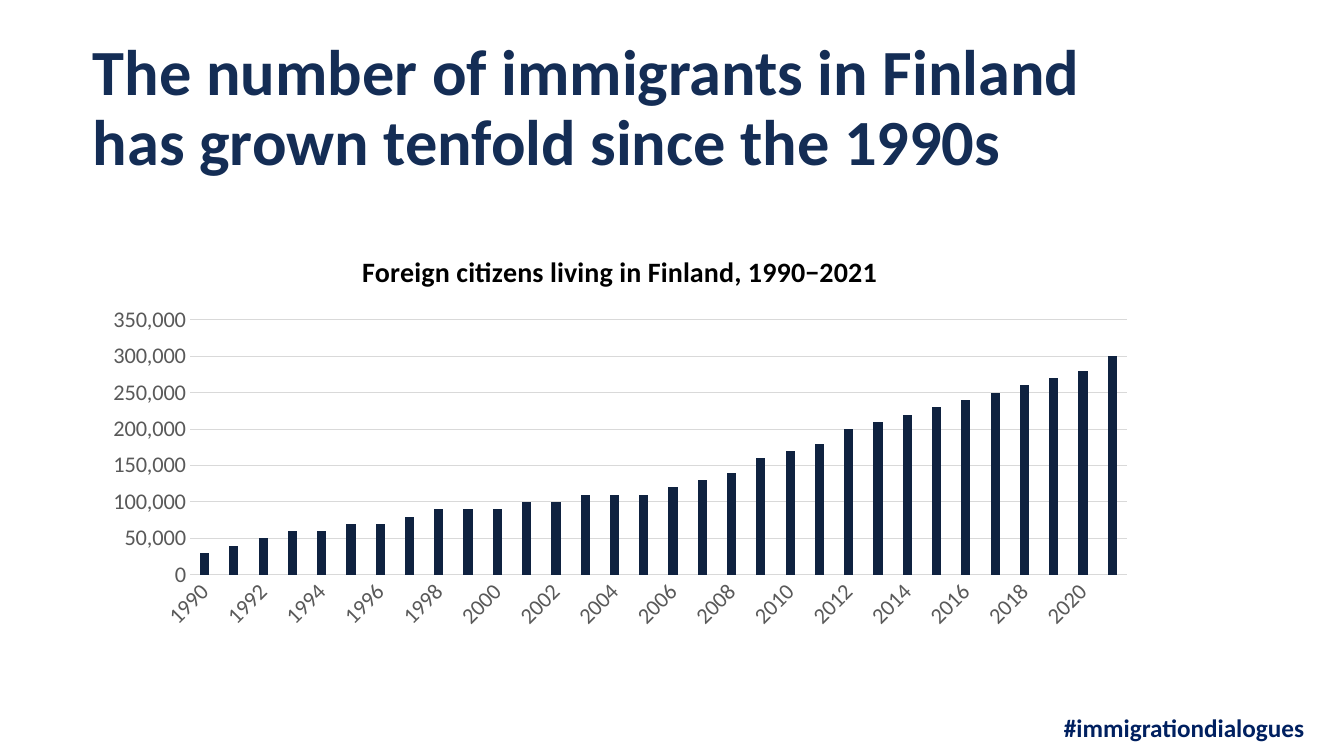
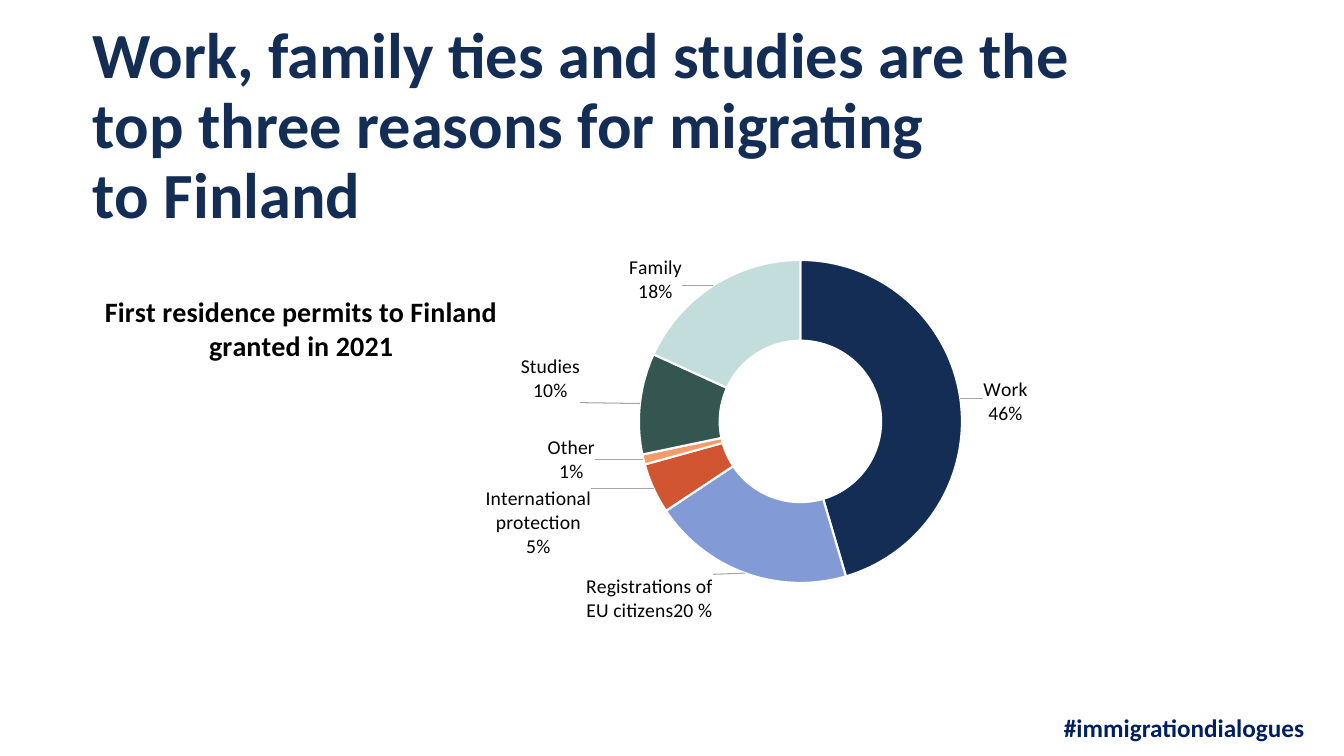
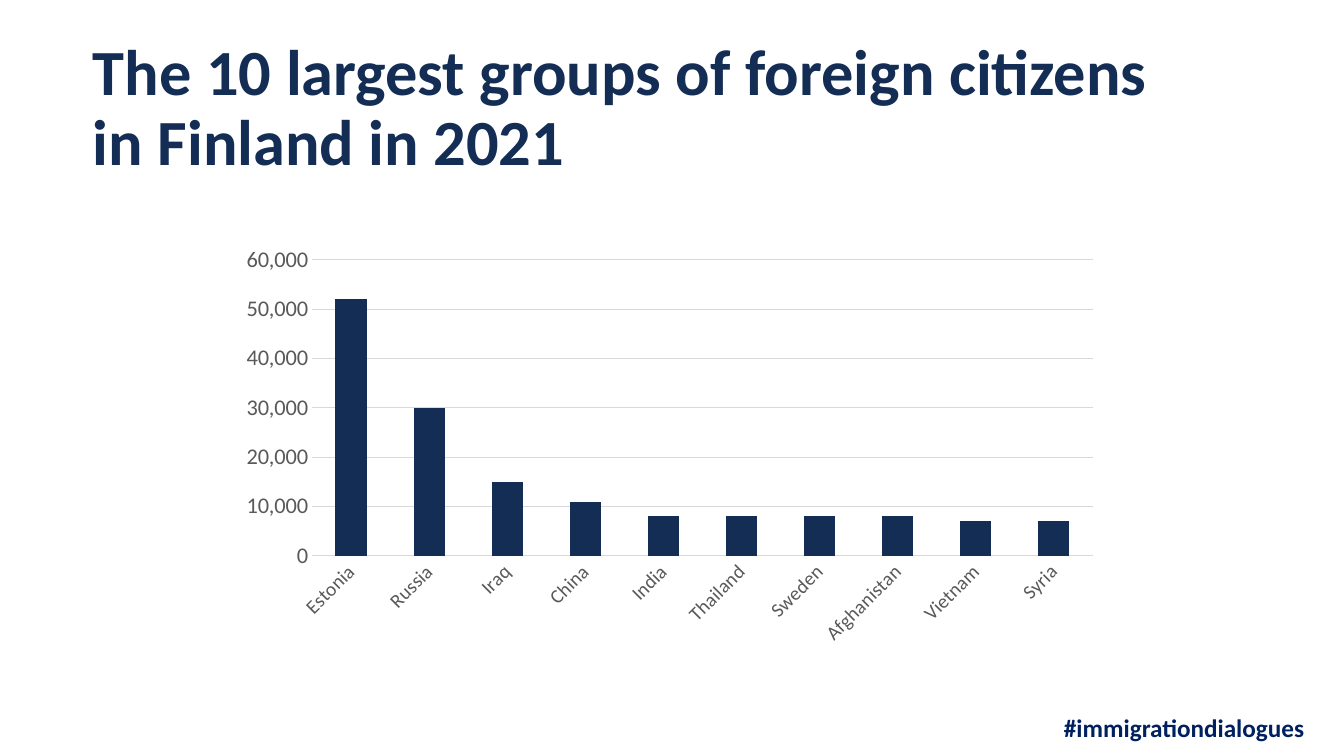
from math import cos, pi, sin

from lxml.etree import SubElement
from pptx import Presentation
from pptx.chart.data import CategoryChartData
from pptx.dml.color import RGBColor
from pptx.enum.chart import XL_CHART_TYPE, XL_TICK_MARK
from pptx.enum.text import MSO_ANCHOR, MSO_AUTO_SIZE, PP_ALIGN
from pptx.oxml import parse_xml
from pptx.oxml.ns import nsdecls, qn
from pptx.util import Pt

# Shared measures and colours
PX = 12192000 / 1344
NAVY, DARK_NAVY, FOOTER_BLUE = "142D55", "0F2240", "002060"
BLACK, AXIS_GREY, GRID_GREY = "000000", "595959", "D9D9D9"
LEFT, WIDTH = 93, 1055


def style_font(font, size, colour, bold=False):
    font.name = "Calibri"
    font.size = Pt(size)
    font.bold = bold
    font.color.rgb = RGBColor.from_string(colour)


def set_layout(parent, position, **settings):
    """Give a chart part a manual layout; fractions are of the chart frame."""
    for old_layout in parent.findall(qn("c:layout")):
        parent.remove(old_layout)
    layout = parse_xml(f"<c:layout {nsdecls('c')}/>")
    manual = SubElement(layout, qn("c:manualLayout"))
    for name, value in settings.items():
        text = value if isinstance(value, str) else f"{value:.4f}"
        SubElement(manual, qn(f"c:{name}")).set("val", text)
    parent.insert(position, layout)


presentation = Presentation()
presentation.slide_width = round(1344 * PX)
presentation.slide_height = round(756 * PX)
title_only = presentation.slide_layouts[5]
for placeholder in list(title_only.placeholders):
    if placeholder.placeholder_format.idx != 0:
        title_only.shapes.element.remove(placeholder.element)

# Slides with their titles: lines and box height
titles = [
    (["The number of immigrants in Finland has grown tenfold since the 1990s"], 137),
    (["Work, family ties and studies are the top three reasons for migrating",
      "to Finland"], 190),
    (["The 10 largest groups of foreign citizens in Finland in 2021"], 137),
]
slides = []
for lines, height in titles:
    slide = presentation.slides.add_slide(title_only)
    slides.append(slide)
    title = slide.shapes.title
    title.left, title.top = round(LEFT * PX), round(42 * PX)
    title.width, title.height = round(WIDTH * PX), round(height * PX)
    frame = title.text_frame
    frame.margin_left = frame.margin_right = frame.margin_top = frame.margin_bottom = 0
    frame.word_wrap = True
    frame.auto_size = MSO_AUTO_SIZE.NONE
    frame.vertical_anchor = MSO_ANCHOR.BOTTOM
    paragraph = frame.paragraphs[0]
    paragraph.alignment = PP_ALIGN.LEFT
    paragraph.line_spacing = 0.9
    for number, line in enumerate(lines):
        if number:
            paragraph.add_line_break()
        run = paragraph.add_run()
        run.text = line
        style_font(run.font, 46, NAVY, True)

# Footer, moved to the layout so that every slide shows it
footer = slides[0].shapes.add_textbox(
    round(1064 * PX), round(709 * PX), round(265 * PX), round(23 * PX))
frame = footer.text_frame
frame.margin_left = frame.margin_right = frame.margin_top = frame.margin_bottom = 0
frame.word_wrap = True
paragraph = frame.paragraphs[0]
paragraph.line_spacing = 1.1
run = paragraph.add_run()
run.text = "#immigrationdialogues"
style_font(run.font, 18, FOOTER_BLUE, True)
title_only.shapes.element.append(footer.element)

# Chart data
citizens = [
    30000, 40000, 50000, 60000, 60000, 70000, 70000, 80000,
    90000, 90000, 90000, 100000, 100000, 110000, 110000, 110000,
    120000, 130000, 140000, 160000, 170000, 180000, 200000, 210000,
    220000, 230000, 240000, 250000, 260000, 270000, 280000, 300000,
]
groups = {
    "Estonia": 52000, "Russia": 30000, "Iraq": 15000, "China": 11000,
    "India": 8000, "Thailand": 8000, "Sweden": 8000, "Afghanistan": 8000,
    "Vietnam": 7000, "Syria": 7000,
}
# Category, value, colour, label lines, label centre in px
permits = [
    ("Work", 45, NAVY, ["Work", "46%"], (1005, 401)),
    ("Registrations of EU citizens", 20, "829BD7",
     ["Registrations of", "EU citizens20 %"], (649, 598)),
    ("International protection", 5, "D25532",
     ["International", "protection", "5%"], (538, 522)),
    ("Other", 1, "F59B69", ["Other", "1%"], (571, 459)),
    ("Studies", 10, "355550", ["Studies", "10%"], (550, 378)),
    ("Family", 18, "C3DCDC", ["Family", "18%"], (655, 279)),
]

# Charts: slide, type, categories, values, frame top and height, plot box,
# title lines, title corner
years = [str(1990 + number) for number in range(len(citizens))]
chart_specs = [
    (slides[0], XL_CHART_TYPE.COLUMN_CLUSTERED, years, citizens, 233, 405,
     (190, 320, 937, 255), ["Foreign citizens living in Finland, 1990−2021"], (357, 247)),
    (slides[1], XL_CHART_TYPE.DOUGHNUT, [permit[0] for permit in permits],
     [permit[1] for permit in permits], 233, 405, (571, 260, 459, 323),
     ["First residence permits to Finland", "granted in 2021"], (102, 290)),
    (slides[2], XL_CHART_TYPE.COLUMN_CLUSTERED, list(groups), list(groups.values()),
     210, 449, (312, 260, 781, 296), [], None),
]
charts = []
for slide, kind, categories, values, top, height, plot_box, lines, corner in chart_specs:
    data = CategoryChartData()
    data.categories = categories
    data.add_series("Series 1", values)
    chart = slide.shapes.add_chart(
        kind, round(LEFT * PX), round(top * PX), round(WIDTH * PX), round(height * PX),
        data).chart
    charts.append(chart)
    chart.has_legend = False
    style_font(chart.font, 10, BLACK)
    x, y, width, plot_height = plot_box
    set_layout(chart._chartSpace.xpath("//c:plotArea")[0], 0,
               layoutTarget="inner", xMode="edge", yMode="edge",
               x=(x - LEFT) / WIDTH, y=(y - top) / height,
               w=width / WIDTH, h=plot_height / height)
    chart.has_title = bool(lines)
    for number, line in enumerate(lines):
        frame = chart.chart_title.text_frame
        paragraph = frame.add_paragraph() if number else frame.paragraphs[0]
        run = paragraph.add_run()
        run.text = line
        style_font(run.font, 20, BLACK, True)
    if lines:
        chart.chart_title.include_in_layout = False
        set_layout(chart._chartSpace.xpath("//c:chart/c:title")[0], 1,
                   xMode="edge", yMode="edge",
                   x=(corner[0] - LEFT) / WIDTH, y=(corner[1] - top) / height)

# Column charts: bars and axes
column_styles = [
    (charts[0], DARK_NAVY, 219, -27, 350000, 50000, 16),
    (charts[2], NAVY, 150, 0, 60000, 10000, 14),
]
for chart, colour, gap, overlap, maximum, step, category_size in column_styles:
    plot = chart.plots[0]
    plot.gap_width, plot.overlap = gap, overlap
    plot.vary_by_categories = False
    fill = plot.series[0].format.fill
    fill.solid()
    fill.fore_color.rgb = RGBColor.from_string(colour)
    value_axis, category_axis = chart.value_axis, chart.category_axis
    for axis, size in ((value_axis, 16), (category_axis, category_size)):
        axis.major_tick_mark = axis.minor_tick_mark = XL_TICK_MARK.NONE
        style_font(axis.tick_labels.font, size, AXIS_GREY)
    value_axis.minimum_scale, value_axis.maximum_scale = 0, maximum
    value_axis.major_unit = step
    value_axis.tick_labels.number_format = "#,##0"
    value_axis.tick_labels.number_format_is_linked = False
    value_axis.format.line.fill.background()
    for line in (value_axis.major_gridlines.format.line, category_axis.format.line):
        line.color.rgb = RGBColor.from_string(GRID_GREY)
        line.width = Pt(0.75)
    chart._chartSpace.xpath("//c:catAx/c:txPr/a:bodyPr")[0].set("rot", "-2700000")

# Doughnut: slices, labels and leader lines
series = charts[1].plots[0].series[0]
labels = series.data_labels
labels.show_value = False
labels.show_percentage = labels.show_category_name = True
labels.number_format, labels.number_format_is_linked = "0%", False
style_font(labels.font, 14, BLACK)
total = sum(permit[1] for permit in permits)
passed = 0
for number, (category, value, colour, lines, (label_x, label_y)) in enumerate(permits):
    point = series.points[number]
    point.format.fill.solid()
    point.format.fill.fore_color.rgb = RGBColor.from_string(colour)
    point.format.line.color.rgb = RGBColor.from_string("FFFFFF")
    point.format.line.width = Pt(1.5)
    frame = point.data_label.text_frame
    for line_number, line in enumerate(lines):
        paragraph = frame.add_paragraph() if line_number else frame.paragraphs[0]
        run = paragraph.add_run()
        run.text = line
        style_font(run.font, 14, BLACK)
    # The label moves out from the middle of its ring segment
    angle = 2 * pi * (passed + value / 2) / total
    passed += value
    ring_x, ring_y = 800 + 121 * sin(angle), 421 - 121 * cos(angle)
    label = series._element.xpath(f"c:dLbls/c:dLbl[c:idx/@val='{number}']")[0]
    set_layout(label, 1, x=(label_x - ring_x) / WIDTH, y=(label_y - ring_y) / 405)
series._element.xpath("c:dLbls")[0].append(parse_xml(
    f'<c:leaderLines {nsdecls("c", "a")}><c:spPr><a:ln w="9525"><a:solidFill>'
    '<a:srgbClr val="A6A6A6"/></a:solidFill></a:ln></c:spPr></c:leaderLines>'))

presentation.save("out.pptx")
